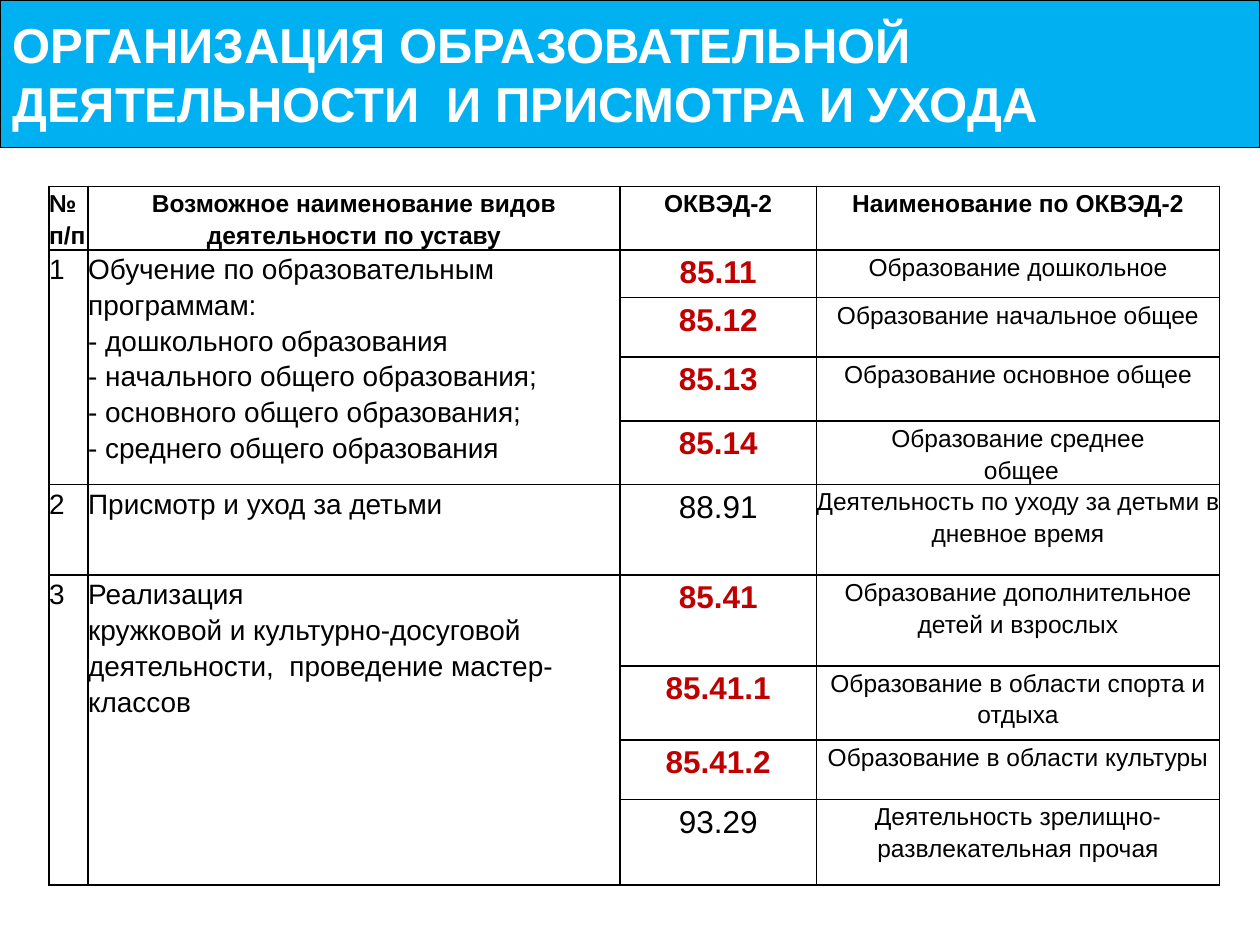
"""Build a slide that maps educational activities to their OKVED-2 codes."""

from dataclasses import dataclass

from lxml.etree import SubElement
from pptx import Presentation
from pptx.dml.color import RGBColor
from pptx.enum.shapes import MSO_SHAPE
from pptx.enum.text import MSO_ANCHOR, PP_ALIGN
from pptx.oxml.ns import qn
from pptx.slide import Slide
from pptx.table import Table, _Cell
from pptx.text.text import TextFrame
from pptx.util import Inches, Pt


@dataclass(frozen=True)
class Theme:
    font: str = "Arial"
    banner: RGBColor = RGBColor(0x00, 0xB0, 0xF0)
    white: RGBColor = RGBColor(0xFF, 0xFF, 0xFF)
    black: RGBColor = RGBColor(0x00, 0x00, 0x00)
    accent: RGBColor = RGBColor(0xC0, 0x00, 0x00)
    title_size: int = 28
    code_size: int = 18
    activity_size: int = 16
    small_size: int = 14
    line_spacing: float = 1.15
    banner_line: float = 0.75
    border_width: float = 1


@dataclass(frozen=True)
class TextStyle:
    size: int
    color: RGBColor
    bold: bool = False
    alignment: PP_ALIGN = PP_ALIGN.CENTER


@dataclass(frozen=True)
class Code:
    number: str
    name: str
    highlighted: bool = True


@dataclass(frozen=True)
class Activity:
    description: str
    codes: tuple[Code, ...]


THEME = Theme()
HEADER = TextStyle(THEME.small_size, THEME.black, True)
HEADER_LEFT = TextStyle(THEME.small_size, THEME.black, True, PP_ALIGN.LEFT)
ACTIVITY = TextStyle(THEME.activity_size, THEME.black, alignment=PP_ALIGN.LEFT)
CODE = TextStyle(THEME.code_size, THEME.black)
HIGHLIGHTED_CODE = TextStyle(THEME.code_size, THEME.accent, True)
CODE_NAME = TextStyle(THEME.small_size, THEME.black)
TITLE = TextStyle(THEME.title_size, THEME.white, True, PP_ALIGN.LEFT)

TITLE_TEXT = "ОРГАНИЗАЦИЯ ОБРАЗОВАТЕЛЬНОЙ\nДЕЯТЕЛЬНОСТИ  И ПРИСМОТРА И УХОДА"
HEADINGS = (
    "№ п/п",
    "Возможное наименование видов деятельности по уставу",
    "ОКВЭД-2",
    "Наименование по ОКВЭД-2",
)
ACTIVITIES = (
    Activity(
        "Обучение по образовательным программам:\n"
        "- дошкольного образования\n"
        "- начального общего образования;\n"
        "- основного общего образования;\n"
        "- среднего общего образования",
        (
            Code("85.11", "Образование дошкольное"),
            Code("85.12", "Образование начальное общее"),
            Code("85.13", "Образование основное общее"),
            Code("85.14", "Образование среднее\n общее"),
        ),
    ),
    Activity(
        "Присмотр и уход за детьми",
        (Code("88.91", "Деятельность по уходу за детьми в дневное время", False),),
    ),
    Activity(
        "Реализация\nкружковой и культурно-досуговой деятельности,  проведение мастер-классов",
        (
            Code("85.41", "Образование дополнительное детей и взрослых"),
            Code("85.41.1", "Образование в области спорта и отдыха"),
            Code("85.41.2", "Образование в области культуры"),
            Code("93.29", "Деятельность зрелищно-развлекательная прочая", False),
        ),
    ),
)
COLUMN_WIDTHS = (0.31, 4.22, 1.56, 3.2)
ROW_HEIGHTS = (0.47, 0.38, 0.47, 0.51, 0.47, 0.72, 0.72, 0.59, 0.47, 0.68)


def write_text(frame: TextFrame, text: str, style: TextStyle, spacing: float = 1.0) -> None:
    """Fill a text frame and format every run."""
    frame.text = text
    for paragraph in frame.paragraphs:
        paragraph.alignment = style.alignment
        paragraph.line_spacing = spacing
        for span in paragraph.runs:
            span.font.name = THEME.font
            span.font.size = Pt(style.size)
            span.font.bold = style.bold
            span.font.color.rgb = style.color


def prepare_cell(cell: _Cell) -> None:
    """Clear a cell's margins and fill and draw its four borders."""
    cell.margin_left = cell.margin_right = cell.margin_top = cell.margin_bottom = 0
    properties = cell._tc.get_or_add_tcPr()
    for side in ("a:lnL", "a:lnR", "a:lnT", "a:lnB"):
        border = SubElement(properties, qn(side), w=str(Pt(THEME.border_width)))
        color = SubElement(SubElement(border, qn("a:solidFill")), qn("a:srgbClr"))
        color.set("val", str(THEME.black))
    cell.fill.background()


def write_cell(table: Table, row: int, column: int, text: str, style: TextStyle) -> None:
    """Write text into one table cell."""
    write_text(table.cell(row, column).text_frame, text, style, THEME.line_spacing)


def add_banner(page: Slide) -> None:
    """Add the title banner across the top."""
    banner = page.shapes.add_shape(MSO_SHAPE.RECTANGLE, 0, 0, Inches(10), Inches(1.17))
    banner.shadow.inherit = False
    banner.fill.solid()
    banner.fill.fore_color.rgb = THEME.banner
    banner.line.color.rgb = THEME.black
    banner.line.width = Pt(THEME.banner_line)
    frame = banner.text_frame
    frame.word_wrap = False
    frame.vertical_anchor = MSO_ANCHOR.MIDDLE
    write_text(frame, TITLE_TEXT, TITLE)


def add_activity(table: Table, number: int, first_row: int, activity: Activity) -> int:
    """Write an activity with its codes and return the next free row."""
    next_row = first_row + len(activity.codes)
    for column, text in enumerate((str(number), activity.description)):
        if len(activity.codes) > 1:
            table.cell(first_row, column).merge(table.cell(next_row - 1, column))
        write_cell(table, first_row, column, text, ACTIVITY)
    for row, code in enumerate(activity.codes, first_row):
        write_cell(table, row, 2, code.number, HIGHLIGHTED_CODE if code.highlighted else CODE)
        write_cell(table, row, 3, code.name, CODE_NAME)
    return next_row


def add_code_table(page: Slide) -> None:
    """Add the table of activities and codes."""
    table = page.shapes.add_table(
        len(ROW_HEIGHTS), len(COLUMN_WIDTHS), Inches(0.39), Inches(1.48),
        Inches(sum(COLUMN_WIDTHS)), Inches(sum(ROW_HEIGHTS)),
    ).table
    table.first_row = table.horz_banding = False
    for column, width in zip(table.columns, COLUMN_WIDTHS):
        column.width = Inches(width)
    for row, height in zip(table.rows, ROW_HEIGHTS):
        row.height = Inches(height)
    for cell in table.iter_cells():
        prepare_cell(cell)
    for column, heading in enumerate(HEADINGS):
        write_cell(table, 0, column, heading, HEADER if column else HEADER_LEFT)
    row = 1
    for number, activity in enumerate(ACTIVITIES, 1):
        row = add_activity(table, number, row, activity)


def main() -> None:
    """Create and save the deck."""
    deck = Presentation()
    deck.slide_width, deck.slide_height = Inches(10), Inches(7.5)
    page = deck.slides.add_slide(deck.slide_layouts[6])
    add_banner(page)
    add_code_table(page)
    deck.save("out.pptx")


if __name__ == "__main__":
    main()
